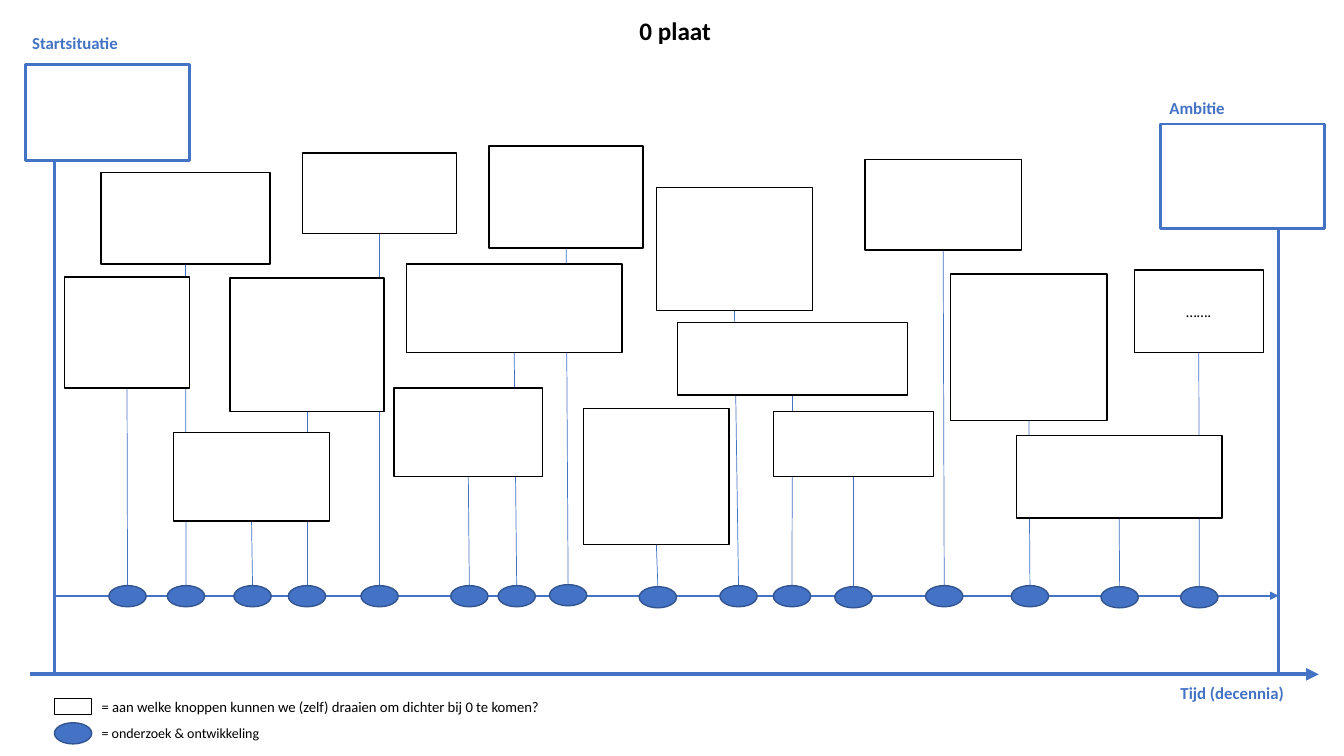
from collections import namedtuple

from lxml import etree
from pptx import Presentation
from pptx.dml.color import RGBColor
from pptx.enum.shapes import MSO_CONNECTOR, MSO_SHAPE
from pptx.enum.text import MSO_ANCHOR, PP_ALIGN
from pptx.oxml.ns import qn
from pptx.util import Inches, Pt

STRAIGHT = MSO_CONNECTOR.STRAIGHT
RECTANGLE, OVAL = MSO_SHAPE.RECTANGLE, MSO_SHAPE.OVAL
LEFT, CENTER = PP_ALIGN.LEFT, PP_ALIGN.CENTER
MIDDLE = MSO_ANCHOR.MIDDLE
TOP_SIDE, BOTTOM_SIDE = 0, 2

BLUE = RGBColor(0x44, 0x72, 0xC4)
DARK_BLUE = RGBColor(0x32, 0x54, 0x91)
BLACK = RGBColor(0, 0, 0)
WHITE = RGBColor(0xFF, 0xFF, 0xFF)
FONT = "Calibri"

COLUMNS, ROWS = 133.3, 75
CELL = Inches(0.1)
DOT_WIDTH, DOT_HEIGHT = 3.7, 2.1

Box = namedtuple("Box", "left top width height")
Knob = namedtuple("Knob", "left top width height dot_left dot_drop text")

TITLE_BOX = Box(30.5, 1, 73.5, 4)
START_BOX = Box(2.5, 6.4, 16.3, 9.5)
AMBITION_BOX = Box(115.1, 12.3, 16.3, 10.4)
BOARD = Box(5.4, 14.5, 121.4, 44.6)
AXIS_BOX = Box(3, 66.9, 127.8, 3.3)
LEGEND_BOX = Box(5.4, 68.7, 80, 5.4)

KNOBS = [
    Knob(1, 13, 12.4, 11, 5.4, 0, ""),
    Knob(4.6, 2.6, 16.8, 9.1, 11.2, 0, ""),
    Knob(11.8, 28.4, 15.5, 8.8, 17.8, 0, ""),
    Knob(17.4, 13.1, 15.3, 13.2, 23.2, 0, ""),
    Knob(24.6, 0.7, 15.3, 8, 30.4, 0, ""),
    Knob(33.7, 24, 14.7, 8.8, 39.3, 0, ""),
    Knob(34.9, 11.7, 21.4, 8.8, 44, 0, ""),
    Knob(43.1, 0, 15.3, 10.1, 49.1, -0.1, ""),
    Knob(52.5, 26, 14.4, 13.5, 58, 0.1, ""),
    Knob(59.7, 4.1, 15.5, 12.2, 66, 0, ""),
    Knob(61.8, 17.5, 22.8, 7.2, 71.3, 0, ""),
    Knob(71.3, 26.3, 15.9, 6.5, 77.4, 0.1, ""),
    Knob(80.4, 1.3, 15.5, 9, 86.4, 0, ""),
    Knob(88.9, 12.7, 15.5, 14.5, 94.9, 0, ""),
    Knob(95.4, 28.7, 20.4, 8.2, 103.8, 0.1, ""),
    Knob(107.1, 12.3, 12.8, 8.2, 111.7, 0.1, "……."),
]


def cells(*counts):
    return [round(count * CELL) for count in counts]


def add_line(slide, start, end, weight, arrow=False):
    line = slide.shapes.add_connector(STRAIGHT, *cells(*start, *end))
    line.line.color.rgb = BLUE
    line.line.width = Pt(weight)
    if arrow:
        etree.SubElement(line.line._get_or_add_ln(), qn("a:tailEnd"), type="triangle")
    etree.SubElement(line._element.spPr, qn("a:effectLst"))
    return line


def add_figure(slide, kind, box, fill, outline, weight):
    figure = slide.shapes.add_shape(kind, *cells(*box))
    figure.shadow.inherit = False
    figure.fill.solid()
    figure.fill.fore_color.rgb = fill
    figure.line.color.rgb = outline
    figure.line.width = Pt(weight)
    return figure


def add_dot(slide, left, top):
    return add_figure(slide, OVAL, Box(left, top, DOT_WIDTH, DOT_HEIGHT), BLUE, DARK_BLUE, 1)


def write(frame, text, size, color, bold=False, align=LEFT):
    paragraph = frame.paragraphs[0]
    paragraph.text = text
    paragraph.alignment = align
    font = paragraph.runs[0].font
    font.name, font.size, font.bold = FONT, Pt(size), bold
    font.color.rgb = color


def add_label(slide, box, text, size, color, bold=False, align=LEFT, wrap=True):
    frame = slide.shapes.add_textbox(*cells(*box)).text_frame
    frame.word_wrap = wrap
    write(frame, text, size, color, bold, align)


def draw_axis(slide, box):
    add_line(slide, (box.left, box.top), (box.left + box.width, box.top), 3, arrow=True)
    caption = Box(box.left + box.width - 14.7, box.top + 0.3, 14.5, 3)
    add_label(slide, caption, "Tijd (decennia)", 12, BLUE, bold=True)


def draw_milestone(slide, box, caption, label_shift, label_rise, post):
    add_line(slide, (post, box.top + box.height), (post, AXIS_BOX.top), 1.75)
    add_figure(slide, RECTANGLE, box, WHITE, BLUE, 2)
    label = Box(box.left - label_shift, box.top - label_rise, 14.5, 3)
    add_label(slide, label, caption, 12, BLUE, bold=True)


def draw_board(slide, box):
    timeline = box.top + box.height
    add_line(slide, (box.left, timeline), (box.left + box.width, timeline), 1.25, arrow=True)
    stems = []
    for knob in KNOBS:
        bottom = (box.left + knob.left + knob.width / 2, box.top + knob.top + knob.height)
        dot_top = (box.left + knob.dot_left + DOT_WIDTH / 2, timeline - 1 + knob.dot_drop)
        stems.append(add_line(slide, bottom, dot_top, 0.5))
    for knob, stem in zip(KNOBS, stems):
        place = Box(box.left + knob.left, box.top + knob.top, knob.width, knob.height)
        panel = add_figure(slide, RECTANGLE, place, WHITE, BLACK, 1)
        if knob.text:
            panel.text_frame.vertical_anchor = MIDDLE
            write(panel.text_frame, knob.text, 11, BLACK, align=CENTER)
        dot = add_dot(slide, box.left + knob.dot_left, timeline - 1 + knob.dot_drop)
        stem.begin_connect(panel, BOTTOM_SIDE)
        stem.end_connect(dot, TOP_SIDE)


def draw_legend(slide, box):
    text_left = box.left + DOT_WIDTH
    knob_key = Box(box.left, box.top + 0.6, DOT_WIDTH, 1.6)
    add_figure(slide, RECTANGLE, knob_key, WHITE, BLACK, 1)
    add_label(slide, Box(text_left, box.top, box.width - DOT_WIDTH, 2.9),
              "= aan welke knoppen kunnen we (zelf) draaien om dichter bij 0 te komen?",
              10.5, BLACK)
    add_dot(slide, box.left, box.top + 3)
    add_label(slide, Box(text_left, box.top + 2.7, 17.9, 2.7),
              "= onderzoek & ontwikkeling", 10, BLACK, wrap=False)


def main():
    deck = Presentation()
    deck.slide_width, deck.slide_height = cells(COLUMNS, ROWS)
    slide = deck.slides.add_slide(deck.slide_layouts[6])
    draw_axis(slide, AXIS_BOX)
    draw_milestone(slide, START_BOX, "Startsituatie", 0.3, 3.6, BOARD.left)
    draw_milestone(slide, AMBITION_BOX, "Ambitie", 0.1, 3.1, BOARD.left + BOARD.width)
    draw_board(slide, BOARD)
    draw_legend(slide, LEGEND_BOX)
    add_label(slide, TITLE_BOX, "0 plaat ", 18, BLACK, bold=True, align=CENTER)
    deck.save("out.pptx")


if __name__ == "__main__":
    main()
